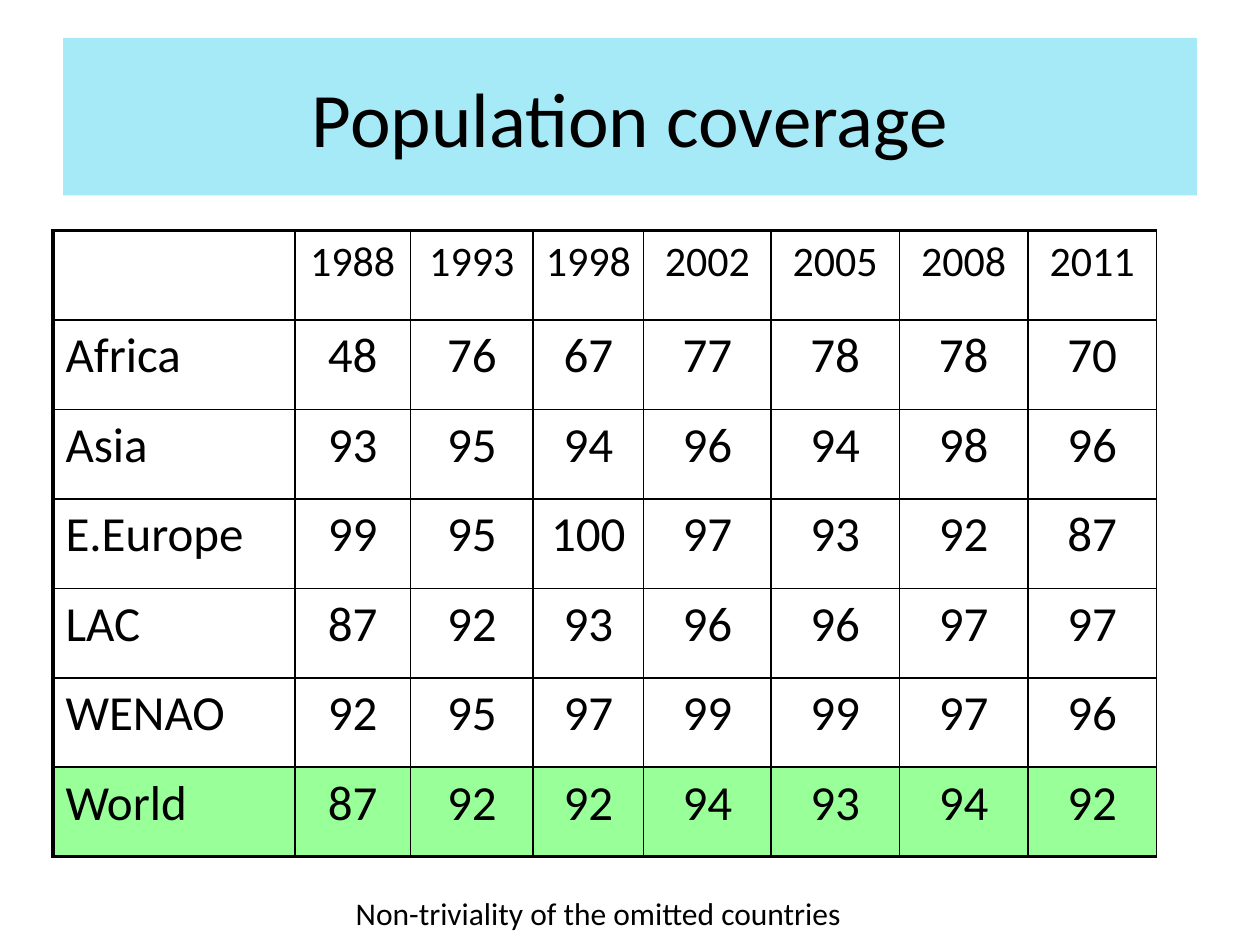
from lxml.etree import SubElement
from pptx import Presentation
from pptx.dml.color import RGBColor
from pptx.enum.text import MSO_ANCHOR, PP_ALIGN
from pptx.oxml.ns import qn
from pptx.util import Inches, Pt

BLACK = RGBColor(0x00, 0x00, 0x00)
SKY = RGBColor(0xA6, 0xEA, 0xF8)
GREEN = RGBColor(0x99, 0xFF, 0x99)

THIN, THICK = 1, 2.25
ROW_HEIGHT = 0.71
COLUMN_WIDTHS = [1.92, 0.92, 0.97, 0.88, 1.01, 1.02, 1.02, 1.02]
COVERAGE = [
    ["", "1988", "1993", "1998", "2002", "2005", "2008", "2011"],
    ["Africa", "48", "76", "67", "77", "78", "78", "70"],
    ["Asia", "93", "95", "94", "96", "94", "98", "96"],
    ["E.Europe", "99", "95", "100", "97", "93", "92", "87"],
    ["LAC", "87", "92", "93", "96", "96", "97", "97"],
    ["WENAO", "92", "95", "97", "99", "99", "97", "96"],
    ["World", "87", "92", "92", "94", "93", "94", "92"],
]


def write_text(frame, text, size, align):
    para = frame.paragraphs[0]
    para.alignment = align
    font = para.font
    if text:
        span = para.add_run()
        span.text = text
        font = span.font
    for name, value in {"name": "Calibri", "size": Pt(size), "bold": False}.items():
        setattr(font, name, value)
    font.color.rgb = BLACK


def set_borders(cell, widths):
    """Draw black cell borders; widths maps a side (L, R, T, B) to points."""
    properties = cell._tc.get_or_add_tcPr()
    for index, (side, width) in enumerate(widths.items()):
        line = SubElement(properties, qn(f"a:ln{side}"), w=str(Pt(width)))
        fill = SubElement(line, qn("a:solidFill"))
        SubElement(fill, qn("a:srgbClr"), val=str(BLACK))
        properties.insert(index, line)


def add_title(page, text):
    title = page.shapes.title
    title.left, title.top = Inches(0.5), Inches(0.3)
    title.width, title.height = Inches(9), Inches(1.25)
    title.fill.solid()
    title.fill.fore_color.rgb = SKY
    title.text_frame.vertical_anchor = MSO_ANCHOR.MIDDLE
    write_text(title.text_frame, text, 44, PP_ALIGN.CENTER)


def add_coverage_table(page):
    last_row = len(COVERAGE) - 1
    table = page.shapes.add_table(
        len(COVERAGE), len(COLUMN_WIDTHS), Inches(0.42), Inches(1.83),
        Inches(sum(COLUMN_WIDTHS)), Inches(ROW_HEIGHT * len(COVERAGE))).table
    table.first_row = table.horz_banding = False
    for column, width in zip(table.columns, COLUMN_WIDTHS):
        column.width = Inches(width)
    for r, values in enumerate(COVERAGE):
        table.rows[r].height = Inches(ROW_HEIGHT)
        for c, value in enumerate(values):
            cell = table.cell(r, c)
            write_text(cell.text_frame, value, 28 if r else 24,
                       PP_ALIGN.CENTER if c else PP_ALIGN.LEFT)
            if r == last_row:
                cell.fill.solid()
                cell.fill.fore_color.rgb = GREEN
            else:
                cell.fill.background()
            set_borders(cell, {
                "L": THIN if c else THICK,
                "R": THIN,
                "T": THIN if r else THICK,
                "B": THICK if r == last_row else THIN,
            })


def add_note(page, text):
    box = page.shapes.add_textbox(Inches(0), Inches(7.05), Inches(6.83), Inches(0.4))
    box.text_frame.word_wrap = True
    write_text(box.text_frame, text, 18, PP_ALIGN.RIGHT)


def main():
    deck = Presentation()
    deck.slide_width, deck.slide_height = Inches(10), Inches(7.5)
    page = deck.slides.add_slide(deck.slide_layouts[5])
    add_title(page, "Population coverage")
    add_coverage_table(page)
    add_note(page, "Non-triviality of the omitted countries ")
    deck.save("out.pptx")


if __name__ == "__main__":
    main()
